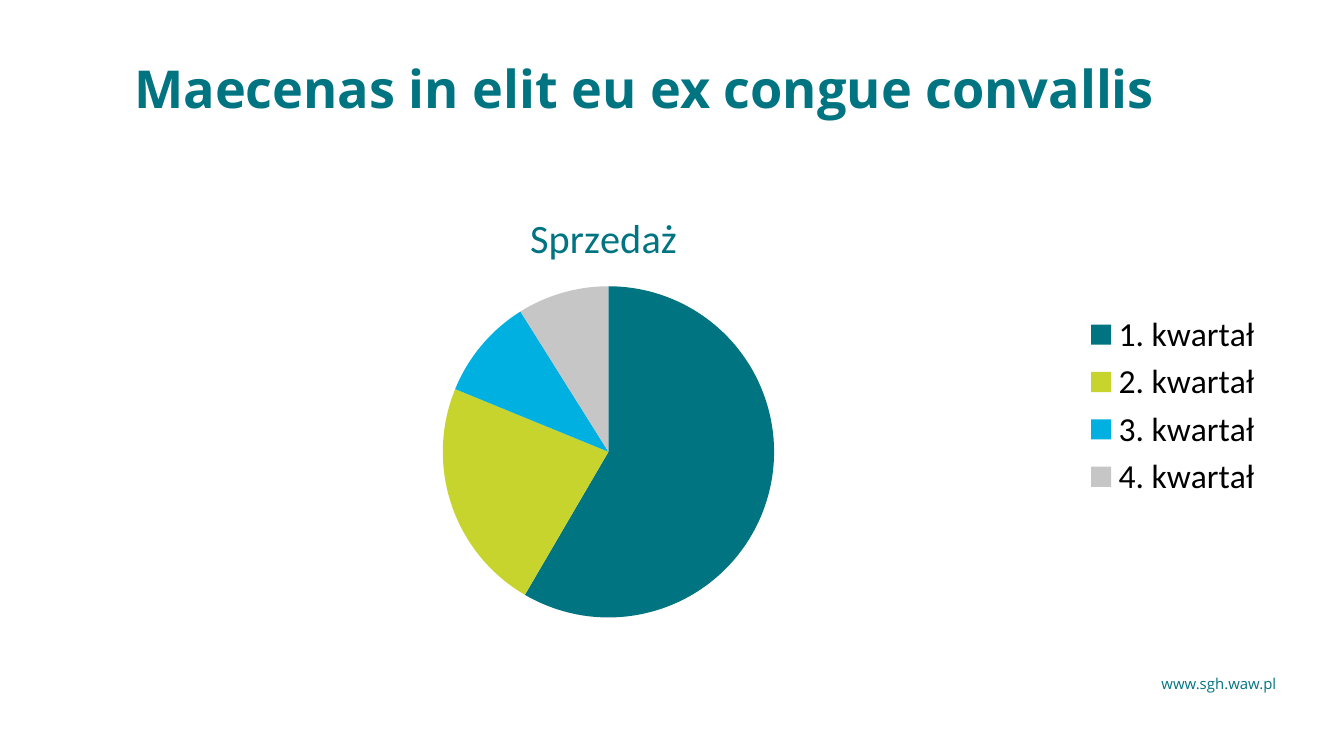
from lxml.etree import SubElement
from pptx import Presentation
from pptx.chart.data import CategoryChartData as ChartData
from pptx.dml.color import RGBColor
from pptx.enum.chart import XL_CHART_TYPE as ChartType, XL_LEGEND_POSITION as LegendPosition
from pptx.enum.text import MSO_ANCHOR as Anchor
from pptx.oxml.ns import qn
from pptx.util import Cm, Pt

SALES = [("1. kwartał", 59), ("2. kwartał", 23), ("3. kwartał", 10), ("4. kwartał", 9)]
SERIES_NAME = "Sprzedaż"

THEME = {
    "teal": RGBColor.from_string("007481"),
    "black": RGBColor.from_string("000000"),
    "slices": ["007481", "C7D42D", "00B0E1", "C6C6C6"],
    "heading_font": "Open Sans",
    "chart_font": "Calibri",
    "heading": Pt(28),
    "chart_title": Pt(21.6),
    "legend": Pt(18),
    "footer": Pt(8),
}

TEXTS = [
    {
        "text": "www.sgh.waw.pl",
        "box": (21.95, 12.75, 2.21, 0.33),
        "wrap": False,
        "font": {"size": THEME["footer"], "bold": False},
    },
    {
        "text": "Maecenas in elit eu ex congue convallis",
        "box": (2.54, 1.07, 21.59, 1.88),
        "wrap": True,
        "font": {"size": THEME["heading"], "bold": True},
    },
]
CHART_BOX = (2.54, 3.3, 21.59, 8.74)
TITLE_LAYOUT = {"xMode": "edge", "yMode": "edge", "x": 0.34, "y": 0.06}
PIE_LAYOUT = {"layoutTarget": "inner", "xMode": "edge", "yMode": "edge",
              "x": 0.27, "y": 0.24, "w": 0.29, "h": 0.72}


def apply(target, values):
    for name, value in values.items():
        setattr(target, name, value)


def style_font(font, color, **values):
    apply(font, values)
    font.color.rgb = color


def add_text(slide, item):
    shape = slide.shapes.add_textbox(*map(Cm, item["box"]))
    frame = shape.text_frame
    apply(frame, {"margin_left": 0, "margin_top": 0, "margin_right": 0, "margin_bottom": 0,
                  "word_wrap": item["wrap"], "vertical_anchor": Anchor.TOP})
    paragraph = frame.paragraphs[0]
    run = paragraph.add_run()
    run.text = item["text"]
    style_font(run.font, THEME["teal"], name=THEME["heading_font"], **item["font"])


def place(element, position, values):
    for old_layout in element.findall(qn("c:layout")):
        element.remove(old_layout)
    layout = SubElement(element, qn("c:layout"))
    manual = SubElement(layout, qn("c:manualLayout"))
    for name, value in values.items():
        SubElement(manual, qn(f"c:{name}")).set("val", str(value))
    element.insert(position, layout)


def add_pie(slide):
    data = ChartData()
    data.categories = [quarter for quarter, _ in SALES]
    data.add_series(SERIES_NAME, [value for _, value in SALES])
    chart = slide.shapes.add_chart(ChartType.PIE, *map(Cm, CHART_BOX), data).chart
    style_font(chart.font, THEME["black"], name=THEME["chart_font"], size=THEME["legend"])

    chart.has_title = True
    title_run = chart.chart_title.text_frame.paragraphs[0].add_run()
    title_run.text = SERIES_NAME
    style_font(title_run.font, THEME["teal"], name=THEME["chart_font"],
               size=THEME["chart_title"], bold=False)

    chart.has_legend = True
    apply(chart.legend, {"position": LegendPosition.RIGHT, "include_in_layout": False})
    style_font(chart.legend.font, THEME["black"], name=THEME["chart_font"], size=THEME["legend"])

    plot = chart.plots[0]
    plot.vary_by_categories = True
    for index, color in enumerate(THEME["slices"]):
        slice_format = plot.series[0].points[index].format
        slice_format.fill.solid()
        slice_format.fill.fore_color.rgb = RGBColor.from_string(color)
        slice_format.line.fill.background()

    chart_element = chart.element.find(qn("c:chart"))
    place(chart_element.find(qn("c:title")), 1, TITLE_LAYOUT)
    place(chart_element.find(qn("c:plotArea")), 0, PIE_LAYOUT)


def main():
    presentation = Presentation()
    apply(presentation, {"slide_width": Cm(25.4), "slide_height": Cm(14.29)})
    slide = presentation.slides.add_slide(presentation.slide_layouts[6])
    for item in TEXTS:
        add_text(slide, item)
    add_pie(slide)
    presentation.save("out.pptx")


if __name__ == "__main__":
    main()
